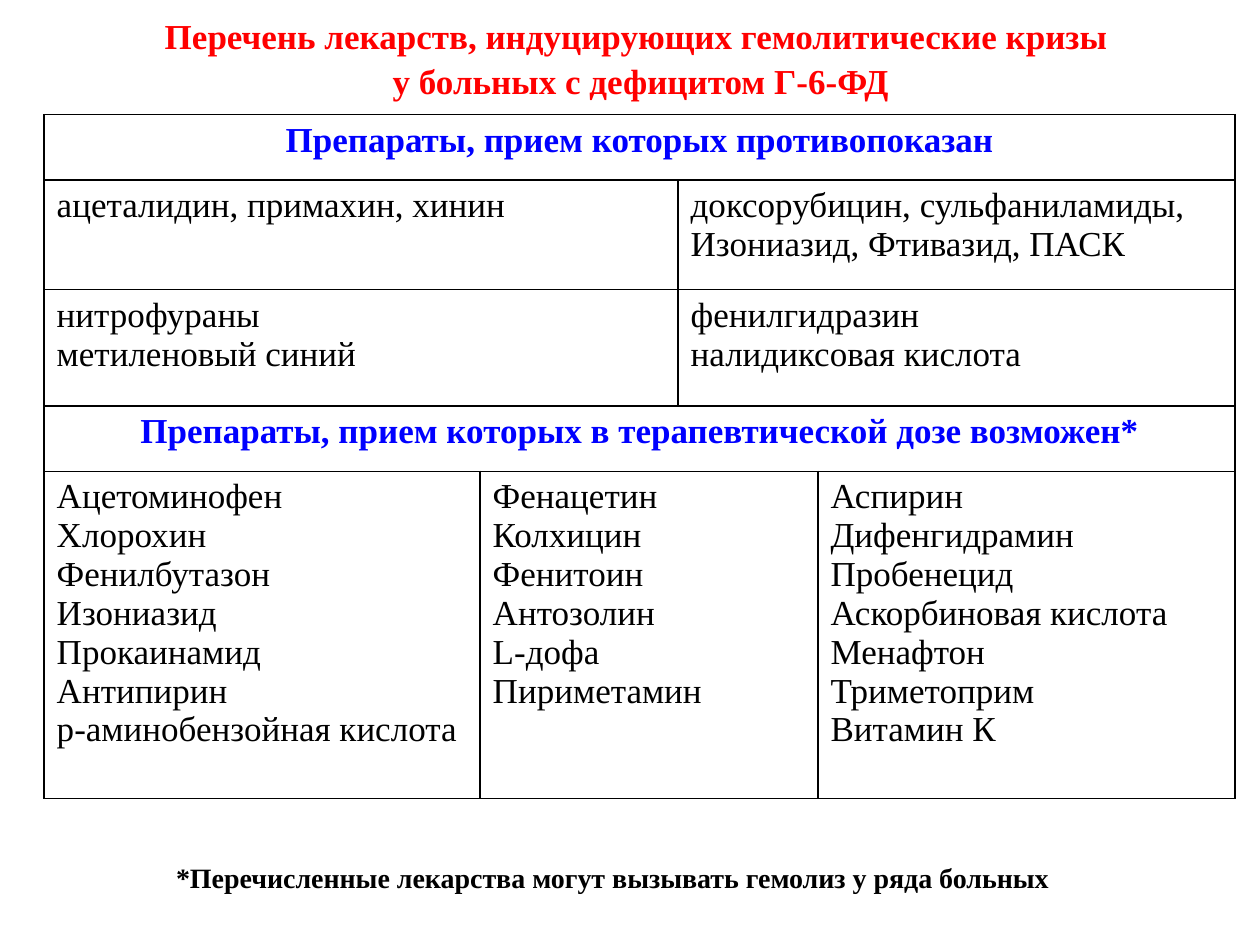
import pptx
import pptx.util
import pptx.dml.color
import pptx.enum.text
import pptx.oxml
import pptx.oxml.ns

Cm = pptx.util.Cm
Pt = pptx.util.Pt
RGB = pptx.dml.color.RGBColor
Align = pptx.enum.text.PP_ALIGN
Anchor = pptx.enum.text.MSO_ANCHOR

# Content
TITLE = ["Перечень лекарств, индуцирующих гемолитические кризы ",
         "у больных с дефицитом Г-6-ФД"]
NOTE = ["*Перечисленные лекарства могут вызывать гемолиз у ряда больных"]

# Each row: kind, then cells as (first column, last column, lines)
ROWS = [
    ("head", [(0, 3, ["Препараты, прием которых противопоказан"])]),
    ("pair", [(0, 1, ["ацеталидин, примахин, хинин"]),
              (2, 3, ["доксорубицин, сульфаниламиды,",
                      "Изониазид, Фтивазид, ПАСК"])]),
    ("pair", [(0, 1, ["нитрофураны", "метиленовый синий"]),
              (2, 3, ["фенилгидразин", "налидиксовая кислота"])]),
    ("head", [(0, 3, ["Препараты, прием которых в терапевтической дозе возможен*"])]),
    ("list", [(0, 0, ["Ацетоминофен", "Хлорохин", "Фенилбутазон", "Изониазид",
                      "Прокаинамид", "Антипирин", "р-аминобензойная кислота"]),
              (1, 2, ["Фенацетин", "Колхицин", "Фенитоин", "Антозолин",
                      "L-дофа", "Пириметамин"]),
              (3, 3, ["Аспирин", "Дифенгидрамин", "Пробенецид",
                      "Аскорбиновая кислота", "Менафтон", "Триметоприм",
                      "Витамин К"])]),
]
WIDTHS = [8.79, 3.99, 2.82, 8.41]
HEIGHTS = [1.32, 2.21, 2.34, 1.32, 6.6]

# Style
FONT = "Times New Roman"
RED = RGB(255, 0, 0)
BLUE = RGB(0, 0, 255)
BLACK = RGB(0, 0, 0)
LOOKS = {
    "head": dict(color=BLUE, bold=True, align=Align.CENTER, hang=0.97),
    "pair": dict(align=Align.JUSTIFY, hang=0.97),
    "list": dict(hang=0.97),
}


def write(frame, lines, size=20, color=BLACK, bold=False, align=Align.LEFT,
          hang=0, space=None):
    frame.word_wrap = True
    for i, line in enumerate(lines):
        para = frame.paragraphs[0] if i == 0 else frame.add_paragraph()
        para.alignment = align
        para.line_spacing = space
        if hang:
            props = para._p.get_or_add_pPr()
            props.set("marL", str(Cm(hang)))
            props.set("indent", str(-Cm(hang)))
        run = para.add_run()
        run.text = line
        font = run.font
        font.name, font.size, font.bold = FONT, Pt(size), bold
        font.color.rgb = color


def frame_cell(cell):
    cell.fill.background()
    props = cell._tc.get_or_add_tcPr()
    for i, side in enumerate("LRTB"):
        props.insert(i, pptx.oxml.parse_xml(
            f'<a:ln{side} {pptx.oxml.ns.nsdecls("a")} w="{Pt(1)}">'
            f'<a:solidFill><a:srgbClr val="{BLACK}"/></a:solidFill></a:ln{side}>'))


deck = pptx.Presentation()
deck.slide_width, deck.slide_height = Cm(25.4), Cm(19.05)
slide = deck.slides.add_slide(deck.slide_layouts[5])

# Title
title = slide.shapes.title
title.left, title.top, title.width, title.height = Cm(0.69), Cm(0.05), Cm(24.2), Cm(2.2)
frame = title.text_frame
frame.auto_size = pptx.enum.text.MSO_AUTO_SIZE.NONE
frame.vertical_anchor = Anchor.TOP
frame.margin_left, frame.margin_top = Cm(0.25), Cm(0.17)
frame.margin_right = frame.margin_bottom = 0
write(frame, TITLE, color=RED, bold=True, align=Align.CENTER, space=1.08)

# Table
table = slide.shapes.add_table(len(ROWS), len(WIDTHS), Cm(0.89), Cm(2.31),
                               Cm(sum(WIDTHS)), Cm(sum(HEIGHTS))).table
table.first_row = table.horz_banding = False
for col, width in zip(table.columns, WIDTHS):
    col.width = Cm(width)
for row, height in zip(table.rows, HEIGHTS):
    row.height = Cm(height)
for cell in table.iter_cells():
    frame_cell(cell)
for r, (kind, cells) in enumerate(ROWS):
    for first, last, lines in cells:
        cell = table.cell(r, first)
        if last > first:
            cell.merge(table.cell(r, last))
        write(cell.text_frame, lines, **LOOKS[kind])

# Footnote
note = slide.shapes.add_textbox(Cm(3.3), Cm(17.22), Cm(19.91), Cm(0.94))
note.text_frame.vertical_anchor = Anchor.MIDDLE
write(note.text_frame, NOTE, size=16, bold=True, align=Align.JUSTIFY)

deck.save("out.pptx")
